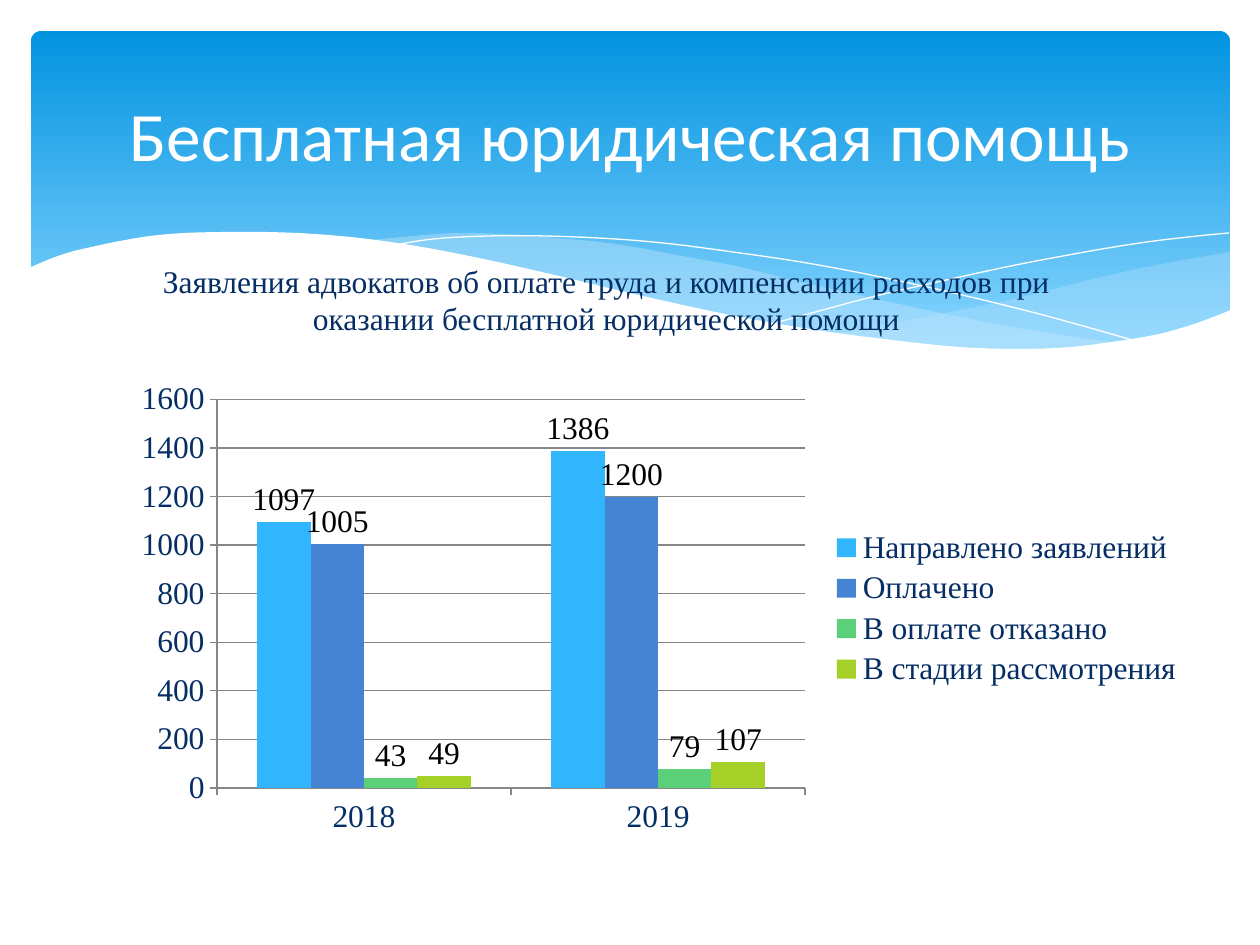
import itertools

import pptx
import pptx.chart.data
import pptx.dml.color
import pptx.enum.chart
import pptx.enum.shapes
import pptx.enum.text
import pptx.oxml.ns
import pptx.util
from lxml import etree

EMU_PER_PX = 914400 / 126
SERIF, SANS = "Times New Roman", "Calibri"
NAVY, WHITE, BLACK, GRAY, PALE = "052E65", "FFFFFF", "000000", "868686", "C6E7FC"

# Wave outlines as knots of smooth curves, in px
RIGHT_WAVE_TOP = [(1230, 252), (1178, 261), (1123, 272), (1085, 281), (1014, 299),
                  (949, 312), (890, 324), (833, 334)]
RIGHT_WAVE_BOTTOM = [(833, 334), (888, 341), (939, 346), (984, 349), (1026, 350),
                     (1076, 348), (1120, 343), (1160, 334), (1196, 324), (1230, 311)]
MIDDLE_WAVE_TOP = [(360, 241), (413, 236), (455, 233), (503, 234), (557, 238), (616, 244),
                   (682, 256), (736, 266), (793, 280), (890, 302), (976, 320), (1055, 334),
                   (1125, 344)]
MIDDLE_WAVE_BOTTOM = [(1125, 344), (1080, 349), (1031, 350), (974, 349), (910, 345),
                      (838, 335), (757, 321), (668, 302), (566, 280), (509, 266),
                      (456, 256), (407, 247), (360, 241)]
FALLING_LINE = [(389, 246), (433, 239), (488, 236), (546, 236), (616, 239), (672, 244),
                (733, 252), (801, 262), (876, 276), (958, 294), (1047, 316), (1143, 343)]
RISING_LINE = [(772, 324), (823, 310), (876, 296), (942, 281), (1016, 265), (1091, 251),
               (1147, 242), (1198, 236), (1229, 233)]
WHITE_WAVE_TOP = [(1231, 310), (1197, 323), (1159, 334), (1118, 341), (1071, 347),
                  (1019, 349), (959, 347), (892, 340), (816, 330), (730, 315), (634, 294),
                  (563, 277), (493, 261), (428, 248), (368, 239), (315, 234), (266, 232),
                  (223, 232), (184, 233), (150, 236), (120, 241), (96, 246), (74, 251),
                  (58, 256), (45, 261), (29, 268)]
WHITE_WAVE_BASE = [(29, 415), (1231, 415)]

YEARS = ["2018", "2019"]
SERIES = [
    ("Направлено заявлений", (1097, 1386), "31B6FD"),
    ("Оплачено", (1005, 1200), "4584D3"),
    ("В оплате отказано", (43, 79), "5BD078"),
    ("В стадии рассмотрения", (49, 107), "A5D028"),
]


def rgb(color):
    return pptx.dml.color.RGBColor.from_string(color)


def px(n):
    return pptx.util.Emu(round(n * EMU_PER_PX))


def smooth(knots, steps=4):
    """Catmull-Rom curve through the knots."""
    padded = [knots[0], *knots, knots[-1]]
    points = []
    for a, b, c, d in zip(padded, padded[1:], padded[2:], padded[3:]):
        for t in (i / steps for i in range(steps)):
            points.append(tuple(
                (2 * q + (r - p) * t + (2 * p - 5 * q + 4 * r - s) * t ** 2
                 + (3 * q - p - 3 * r + s) * t ** 3) / 2
                for p, q, r, s in zip(a, b, c, d)))
    return points + [knots[-1]]


class Deck:
    def __init__(self, width, height):
        self.prs = pptx.Presentation()
        self.prs.slide_width, self.prs.slide_height = px(width), px(height)
        self.s = self.prs.slides.add_slide(self.prs.slide_layouts[6])

    def banner(self, x, y, w, h, top, bottom):
        sp = self.s.shapes.add_shape(pptx.enum.shapes.MSO_SHAPE.ROUNDED_RECTANGLE,
                                     px(x), px(y), px(w), px(h))
        sp.adjustments[0] = 0.03
        sp.shadow.inherit = False
        sp.line.fill.background()
        sp.fill.gradient()
        sp.fill.gradient_angle = 270
        for stop, (position, color) in zip(sp.fill.gradient_stops, [(0, top), (0.9, bottom)]):
            stop.position = position
            stop.color.rgb = rgb(color)

    def outline(self, points, closed):
        points = [(px(x), px(y)) for x, y in points]
        builder = self.s.shapes.build_freeform(*points[0])
        builder.add_line_segments(points[1:], close=closed)
        sp = builder.convert_to_shape()
        sp.shadow.inherit = False
        return sp

    def wave(self, points, color, opacity=100):
        sp = self.outline(points, closed=True)
        sp.line.fill.background()
        sp.fill.solid()
        sp.fill.fore_color.rgb = rgb(color)
        if opacity < 100:
            clr = sp.fill._xPr.find(".//" + pptx.oxml.ns.qn("a:srgbClr"))
            etree.SubElement(clr, pptx.oxml.ns.qn("a:alpha"), val=str(opacity * 1000))

    def hairline(self, points, color):
        sp = self.outline(points, closed=False)
        sp.fill.background()
        sp.line.color.rgb = rgb(color)
        sp.line.width = 0

    def font(self, f, size, name, color):
        f.size, f.name = pptx.util.Pt(size), name
        f.color.rgb = rgb(color)

    def text(self, x, y, w, h, words, size, name, color):
        tf = self.s.shapes.add_textbox(px(x), px(y), px(w), px(h)).text_frame
        tf.word_wrap = True
        tf.vertical_anchor = pptx.enum.text.MSO_ANCHOR.MIDDLE
        p = tf.paragraphs[0]
        p.alignment = pptx.enum.text.PP_ALIGN.CENTER
        r = p.add_run()
        r.text = words
        self.font(r.font, size, name, color)

    def column_chart(self, x, y, w, h, categories, series, size):
        data = pptx.chart.data.CategoryChartData()
        data.categories = categories
        for name, values, _ in series:
            data.add_series(name, values)
        chart = self.s.shapes.add_chart(pptx.enum.chart.XL_CHART_TYPE.COLUMN_CLUSTERED,
                                        px(x), px(y), px(w), px(h), data).chart
        self.font(chart.font, size, SANS, BLACK)
        chart.has_title = False
        chart.has_legend = True
        chart.legend.position = pptx.enum.chart.XL_LEGEND_POSITION.RIGHT
        chart.legend.include_in_layout = False
        self.font(chart.legend.font, size, SERIF, NAVY)

        for axis in (chart.category_axis, chart.value_axis):
            axis.major_tick_mark = pptx.enum.chart.XL_TICK_MARK.OUTSIDE
            axis.format.line.color.rgb = rgb(GRAY)
            self.font(axis.tick_labels.font, size, SERIF, NAVY)
        chart.value_axis.major_gridlines.format.line.color.rgb = rgb(GRAY)

        plot = chart.plots[0]
        plot.gap_width, plot.overlap = 150, 0
        plot.vary_by_categories = False
        for ser, (_, _, color) in zip(plot.series, series):
            ser.format.fill.solid()
            ser.format.fill.fore_color.rgb = rgb(color)
            ser.data_labels.show_value = True
            self.font(ser.data_labels.font, size, SERIF, BLACK)


def main():
    deck = Deck(1260, 945)

    # Banner with waves
    deck.banner(31, 31, 1199, 340, "0293E0", "83D3FE")
    for top, bottom, opacity in [(RIGHT_WAVE_TOP, RIGHT_WAVE_BOTTOM, 29),
                                 (MIDDLE_WAVE_TOP, MIDDLE_WAVE_BOTTOM, 40)]:
        deck.wave(list(itertools.chain(smooth(top), smooth(bottom))), PALE, opacity)
    for line in (FALLING_LINE, RISING_LINE):
        deck.hairline(smooth(line), WHITE)
    deck.wave(smooth(WHITE_WAVE_TOP) + WHITE_WAVE_BASE, WHITE)

    # Chart
    deck.column_chart(120, 373, 1077, 471, YEARS, SERIES, 18)

    # Title and chart heading
    deck.text(63, 47, 1134, 173, "Бесплатная юридическая помощь", 39.6, SANS, WHITE)
    deck.text(115, 255, 983, 89,
              "Заявления адвокатов об оплате труда и компенсации расходов при "
              "оказании бесплатной юридической помощи", 18, SERIF, NAVY)

    deck.prs.save("out.pptx")


if __name__ == "__main__":
    main()
